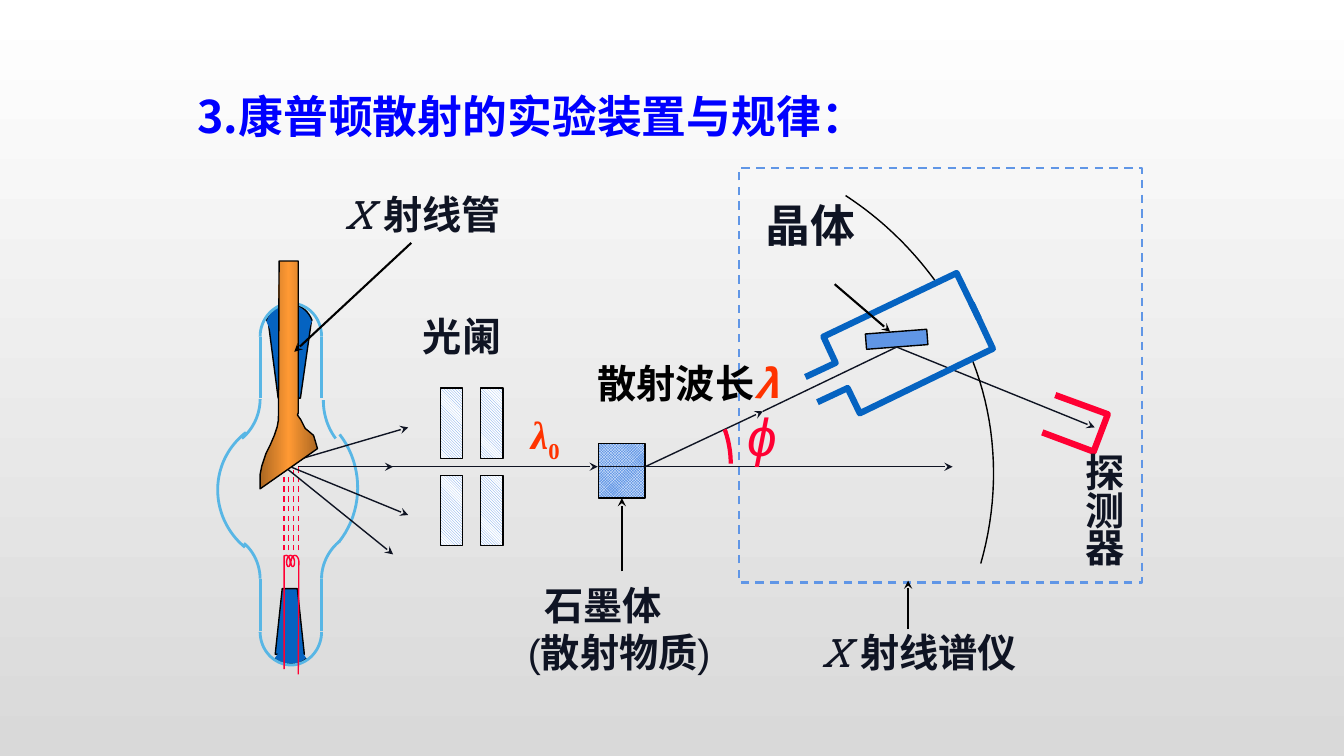
from math import cos, sin, pi
from copy import deepcopy
from lxml.etree import SubElement
from pptx import Presentation
from pptx.dml.color import RGBColor
from pptx.enum.dml import MSO_LINE, MSO_PATTERN
from pptx.enum.shapes import MSO_CONNECTOR, MSO_SHAPE
from pptx.oxml.ns import qn
from pptx.util import Pt

INK = dict(black="000000", dark="0F1423", title="0000FF", red="FF0033",
           orange="FF3300", glass="58B6E5", blue="0563C1", pale="6096E6",
           white="FFFFFF", grey="D9D9D9", brown="AB6722", copper="FF9933")
SANS, SLAB, ARIAL, TIMES = "Noto Sans CJK SC", "Roboto Slab", "Arial", "Times New Roman"
XRAY = ("X ", dict(font=SLAB, bold=False, italic=True))

# Labels: paragraphs of (text, format) runs, box, format
LABELS = [
    ([[("3.康普顿散射的实验装置与规律：", {})]], (134, 60, 495, 46), dict(size=32, font=SANS, color="title")),
    ([[("晶体", {})]], (540, 137.5, 78.5, 46), dict(size=32)),
    ([[("光阑", {})]], (295, 219.6, 75, 41), dict(font=SLAB)),
    ([[XRAY, ("射线管", dict(font=SANS))]], (239, 132.5, 126.7, 41), dict(wrap=True)),
    ([[("探", {})], [("测", {})], [("器", {})]], (768.2, 323.3, 42.5, 88.6), dict(space=0.8)),
    ([[XRAY, ("射线谱仪", {})]], (579.6, 449.3, 155.5, 37.4), dict(wrap=True, space=0.9)),
    ([[("石墨体", {})], [("(", dict(bold=False)), ("散射物质", {}), (")", dict(bold=False))]],
     (370, 411.8, 145.4, 75), dict(wrap=True, indent=12)),
    ([[("ϕ", dict(italic=True))]], (534.2, 288, 23, 46),
     dict(size=38, color="red", bold=False, inset=0)),
    ([[("λ", dict(italic=True)), ("0", dict(base=-25000))]], (372.2, 289.4, 39, 41),
     dict(font=TIMES, color="orange")),
    ([[("散射波长", {}), ("λ", dict(color="orange", italic=True))]], (419.8, 253.4, 174.2, 41),
     dict(font=SANS, color="black", wrap=True)),
]

# Outlines: pairs are corners, sixes are cubic curves
LEFT, RIGHT = 185.8, 229.7
TUBE = [
    [(175, 391), (162.7, 380.9, 155.5, 365.8, 155.5, 349.9), (155.5, 334, 162.7, 319, 175.7, 308.9)],
    [(242.6, 310.3), (259.9, 332.6, 259.9, 365, 241.9, 387.4)],
    [(174.2, 388.1), (181.4, 393.8, LEFT, 403.9, LEFT, 413.3)],
    [(LEFT, 285), (LEFT, 295.2, 181.4, 306, 172.8, 313.2)],
    [(239.8, 313.2), (234, 305.3, 231, 295.9, 231, 285.8)],
    [(RIGHT, 413.3), (RIGHT, 403.9, 234, 393.8, 242.6, 386.6)],
    [(LEFT, 240.5), (LEFT, 227.5, 195.8, 216.7, 208, 216.7), (219.6, 216.7, RIGHT, 226.8, RIGHT, 240.5)],
    [(LEFT, 451.4), (LEFT, 464.4, 195.8, 475, 208, 475), (219.6, 475, RIGHT, 464.4, RIGHT, 451.4)],
]
SEALS = [  # block, rim curve, inner point
    ([(191.5, 229), (198.7, 284.4), (214.6, 284.4), (222.5, 229)],
     [(190, 229), (196, 213, 217, 213, 223, 229)], (208, 268)),
    ([(196.6, 467.3), (201.6, 420.5), (212.4, 420.5), (217.4, 467.3)],
     [(219, 470.5), (213, 476, 203, 476, 196, 470.5)], (208, 454)),
]
ANODE = [(185.8, 349.2), (185.8, 339), (187, 333), (190, 324), (193, 318), (196, 311),
         (198, 305), (198.9, 300), (199.4, 186.5), (213.1, 186.5), (213.1, 295),
         (212.5, 296.5), (215, 300), (218, 306), (224, 311), (225.5, 316), (226.8, 320.5)]
ARCS = [
    ([(517.7, 306.7), (520.6, 314.6, 522, 323.3, 522, 331.2)], "red", 3),
    ([(604, 139.7), (629.3, 156.2, 650.9, 177.1, 668.2, 200.9)], "black", 1),
    ([(694.8, 257.8), (712.8, 303.8, 714.2, 355, 700.6, 402.5)], "black", 1),
    ([(744.5, 308.9), (781.2, 322.6), (791.3, 295.9), (753.8, 282.2)], "red", 4.5),
    ([(575.3, 269.3), (596.9, 259.2), (588.2, 240.5), (683.3, 195.1), (699.1, 227.5)], "blue", 4.5),
    ([(583.9, 287.3), (605.5, 277.2), (614.2, 295.2), (709.2, 249.1), (694.1, 216.7)], "blue", 4.5),
]
AXIS = 333.4
RAYS = [(427, AXIS, 680.4, AXIS), (223.9, AXIS, 427, AXIS), (460.8, AXIS, 545, 293.8),
        (207.4, AXIS, 291.6, 367.9), (213.1, AXIS, 280.8, AXIS),
        (205.9, 335.5, 280.8, 396), (213.1, 328.3, 291.6, 305.3)]
POINTERS = [(293.8, 173.5, 210.2, 251.3), (648.7, 449.3, 648.7, 414.7), (596.2, 203, 635.8, 236.9)]
BEAM = [(203, 339.1), (205.9, 339.1), (209.5, 335.5), (213.1, 331.9)]  # x, top

deck = Presentation()
deck.slide_width, deck.slide_height = Pt(960), Pt(540)
slide = deck.slides.add_slide(deck.slide_layouts[6])
shapes = slide.shapes


def rgb(name):
    return RGBColor.from_string(INK[name])


def shade(fill, names, angle):
    fill.gradient()
    fill.gradient_angle = angle
    stops = fill.gradient_stops
    for i, (stop, name) in enumerate(zip(stops, names)):
        stop.color.rgb = rgb(name)
        stop.position = i / (len(names) - 1)


def ink(line, color, width, dash=False):
    line.color.rgb = rgb(color)
    line.width = Pt(width)
    if dash:
        line.dash_style = MSO_LINE.DASH


def text(paras, box, size=28, font=ARIAL, color="dark", bold=True, italic=False,
         wrap=False, space=None, indent=0, inset=7.2):
    frame = shapes.add_textbox(*map(Pt, box)).text_frame
    frame.word_wrap = wrap
    frame.margin_left = frame.margin_right = Pt(inset)
    frame.margin_top = frame.margin_bottom = Pt(inset / 2)
    for i, runs in enumerate(paras):
        para = frame.add_paragraph() if i else frame.paragraphs[0]
        if space:
            para.line_spacing = space
        if indent and not i:
            para._p.get_or_add_pPr().set("indent", str(Pt(indent)))
        for words, own in runs:
            run = para.add_run()
            run.text = words
            face = run.font
            face.size, face.name = Pt(size), own.get("font", font)
            face.bold, face.italic = own.get("bold", bold), own.get("italic", italic)
            face.color.rgb = rgb(own.get("color", color))
            props = run._r.get_or_add_rPr()
            SubElement(props, qn("a:ea")).set("typeface", SANS)
            if "base" in own:
                props.set("baseline", str(own["base"]))


def line(ends, color="dark", width=1, arrow=True, dash=False):
    wire = shapes.add_connector(MSO_CONNECTOR.STRAIGHT, *map(Pt, ends))
    ink(wire.line, color, width, dash)
    if arrow:
        SubElement(wire.line._get_or_add_ln(), qn("a:tailEnd")).set("type", "stealth")
    SubElement(wire._element.spPr, qn("a:effectLst"))
    return wire


def trace(marks, steps=20):
    dots = []
    for mark in marks:
        if len(mark) == 2:
            dots.append(mark)
            continue
        knots = [dots[-1], mark[:2], mark[2:4], mark[4:]]
        for t in (n / steps for n in range(1, steps + 1)):
            mix = ((1 - t) ** 3, 3 * t * (1 - t) ** 2, 3 * t * t * (1 - t), t ** 3)
            dots.append(tuple(sum(m * k[a] for m, k in zip(mix, knots)) for a in (0, 1)))
    return [(Pt(x), Pt(y)) for x, y in dots]


def draw(marks, color=None, width=1, fill=None):
    dots = trace(marks)
    pen = shapes.build_freeform(*dots[0])
    pen.add_line_segments(dots[1:], close=fill is not None)
    form = pen.convert_to_shape()
    form.shadow.inherit = False
    if fill:
        form.fill.solid()
        form.fill.fore_color.rgb = rgb(fill)
    else:
        form.fill.background()
    if color:
        ink(form.line, color, width)
    else:
        form.line.fill.background()
    return form


def rect(box, color="black", width=1, fill=None, hatch=None, fore="pale", back="white", dash=False):
    form = shapes.add_shape(MSO_SHAPE.RECTANGLE, *map(Pt, box))
    form.shadow.inherit = False
    ink(form.line, color, width, dash)
    if hatch:
        form.fill.patterned()
        form.fill.pattern = hatch
        form.fill.fore_color.rgb, form.fill.back_color.rgb = rgb(fore), rgb(back)
    elif fill:
        form.fill.solid()
        form.fill.fore_color.rgb = rgb(fill)
    else:
        form.fill.background()
    return form


# Background and spectrometer frame
shade(slide.background.fill, ("white", "grey"), 270)
rect((527.8, 120.2, 288, 295.9), "pale", 1.5, dash=True)

# Diaphragm slits, graphite and crystal
for x in (314.6, 343.4):
    for y in (277.2, 339.5):
        rect((x, y, 16, 50.4), hatch=MSO_PATTERN.LIGHT_DOWNWARD_DIAGONAL)
block = rect((427.7, 316.8, 33, 39), hatch=MSO_PATTERN.SMALL_CHECKER_BOARD, fore="white", back="pale")
crystal = rect((618.5, 236.9, 44, 11), fill="pale")
crystal.rotation = 355.6

# X-ray tube
for body, rim, tip in SEALS:
    draw(body, "black", fill="blue")
    draw(rim + [tip], fill="blue")
    draw(rim, "black")
for part in TUBE:
    draw(part, "glass", 2)
for x in (LEFT, RIGHT):
    for top, end in ((240.5, 284.4), (413.3, 450.7)):
        line((x, top, x, end), "glass", 2, arrow=False)

# Heating coil and electron beam
turns = [n * pi / 10 for n in range(46)]
coil = [(204.5 + 3.1 * t / (2 * pi) + 2 * sin(t), 400.7 - 4 * cos(t)) for t in turns]
draw([(203, 478), (203, 397)] + coil + [(213.1, 481.7)], "red")
for x, top in BEAM:
    line((x, 393.1, x, top), "red", arrow=False, dash=True)

# Rays
for ends in RAYS:
    line(ends)
line((427, AXIS, 460.8, AXIS), arrow=False)
line((545, 293.8, 640.5, 247.9), arrow=False).end_connect(crystal, 2)
line((640.5, 247.9, 782, 305.3)).begin_connect(crystal, 2)

# Anode
rod = draw(ANODE, "black", fill="copper")
rod.fill.gradient()
stops = rod._element.spPr.find(".//" + qn("a:gsLst"))
stops.append(deepcopy(stops[0]))
shade(rod.fill, ("brown", "copper", "brown"), 0)

# Arcs, housing and detector
for marks, color, width in ARCS:
    draw(marks, color, width)

# Pointers and labels
for i, ends in enumerate(POINTERS):
    line(ends, "black", 1.5)
line((444.2, 408.2, 444.2, 355.8), "black", 1.5).end_connect(block, 2)
for paras, box, look in LABELS:
    text(paras, box, **look)

deck.save("out.pptx")
